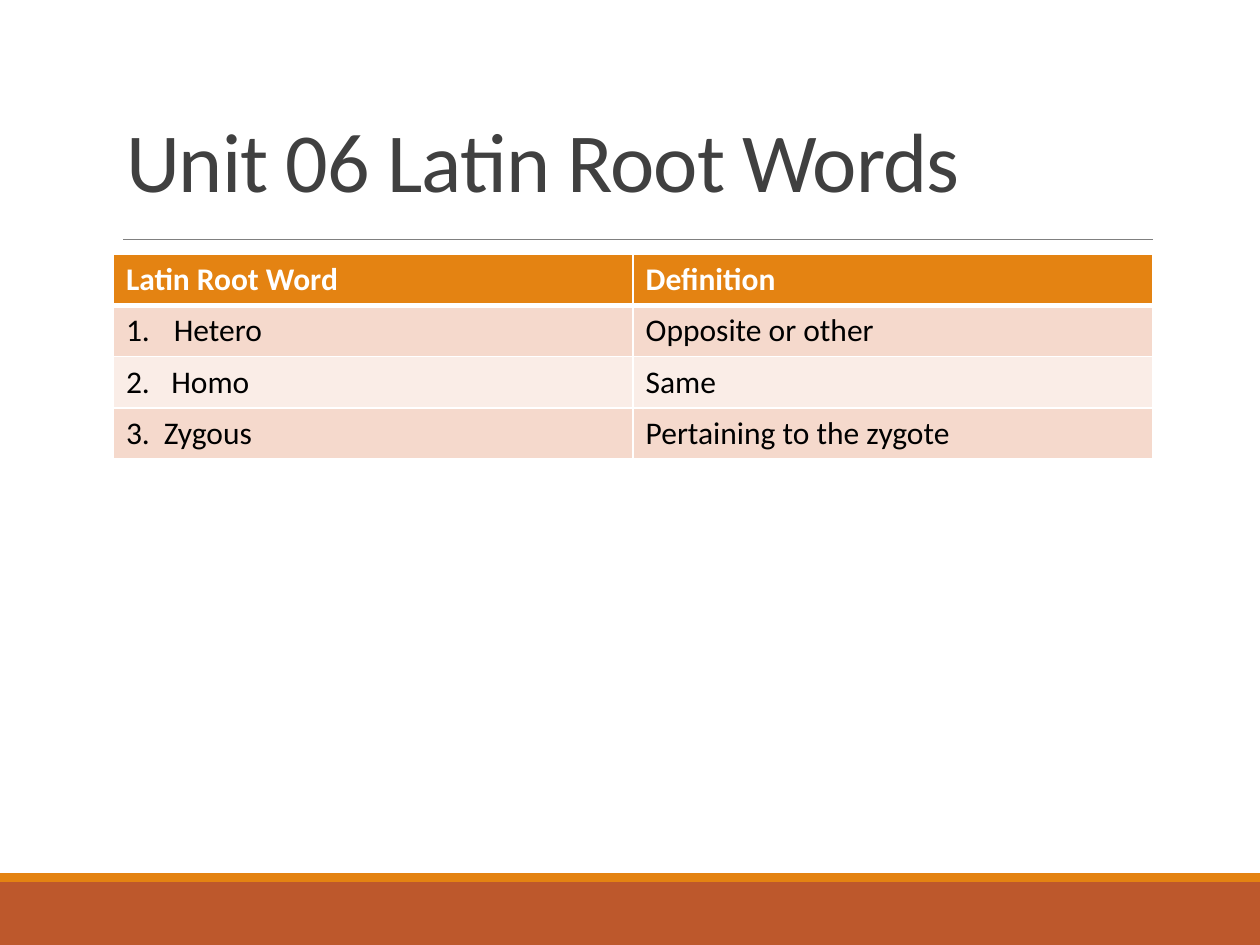
"""Build a slide with a table of Latin root words and their definitions."""
from lxml import etree
from pptx import Presentation
from pptx.dml.color import RGBColor
from pptx.enum import shapes, text
from pptx.oxml.ns import qn
from pptx.util import Inches, Pt

WHITE = RGBColor(0xFF, 0xFF, 0xFF)
BLACK = RGBColor(0x00, 0x00, 0x00)
ORANGE = RGBColor(0xE4, 0x83, 0x12)
RUST = RGBColor(0xBD, 0x58, 0x2C)
GRAY = RGBColor(0x80, 0x80, 0x80)
CHARCOAL = RGBColor(0x40, 0x40, 0x40)
PEACH = RGBColor(0xF5, 0xD9, 0xCC)
PALE_PEACH = RGBColor(0xFA, 0xED, 0xE7)
FONT = "Calibri"
ROWS = [
    ("Latin Root Word", "Definition"),
    ("Hetero", "Opposite or other"),
    ("Homo", "Same"),
    ("Zygous", "Pertaining to the zygote"),
]
ROW_FILLS = [ORANGE, PEACH, PALE_PEACH, PEACH]
NUMBER_INDENTS = [0, 0.38, 0.36, 0.3]


def add_border(cell, side, width):
    line = etree.SubElement(cell._tc.get_or_add_tcPr(), qn(f"a:ln{side}"), w=str(Pt(width)))
    fill = etree.SubElement(line, qn("a:solidFill"))
    etree.SubElement(fill, qn("a:srgbClr"), val=str(WHITE))


def number_paragraph(para, number, indent):
    properties = para._p.get_or_add_pPr()
    properties.set("marL", str(Inches(indent)))
    properties.set("indent", str(-Inches(indent)))
    etree.SubElement(properties, qn("a:buFont"), typeface="+mj-lt")
    etree.SubElement(properties, qn("a:buAutoNum"), type="arabicPeriod", startAt=str(number))


deck = Presentation()
deck.slide_width, deck.slide_height = Inches(10), Inches(7.5)
page = deck.slides.add_slide(deck.slide_layouts[5])

for top, height, color in [(7, 0.5, RUST), (6.93, 0.07, ORANGE)]:
    band = page.shapes.add_shape(
        shapes.MSO_SHAPE.RECTANGLE, 0, Inches(top), deck.slide_width, Inches(height))
    band.shadow.inherit = False
    band.fill.solid()
    band.fill.fore_color.rgb = color
    band.line.fill.background()

rule = page.shapes.add_connector(
    shapes.MSO_CONNECTOR.STRAIGHT, Inches(0.98), Inches(1.9), Inches(9.15), Inches(1.9))
rule.line.color.rgb = GRAY
rule.line.width = Pt(0.5)
etree.SubElement(rule._element.spPr, qn("a:effectLst"))

title = page.shapes.title
title.left, title.top = Inches(0.9), Inches(0.12)
title.width, title.height = Inches(8.25), Inches(1.59)
frame = title.text_frame
frame.text = "Unit 06 Latin Root Words"
frame.word_wrap = True
frame.auto_size = text.MSO_AUTO_SIZE.NONE
frame.vertical_anchor = text.MSO_ANCHOR.BOTTOM
para = frame.paragraphs[0]
para.alignment = text.PP_ALIGN.LEFT
para.line_spacing = 0.85
para.font.name = FONT
para.font.size = Pt(48)
para.font.color.rgb = CHARCOAL
para.runs[0].font._element.set("spc", "-50")

table = page.shapes.add_table(
    len(ROWS), 2, Inches(0.9), Inches(2.02), Inches(8.25), Inches(1.62)).table
for row, words in enumerate(ROWS):
    for column, word in enumerate(words):
        cell = table.cell(row, column)
        for side in "LRTB":
            header_edge = (row, side) in [(0, "B"), (1, "T")]
            add_border(cell, side, 3 if header_edge else 1)
        cell.fill.solid()
        cell.fill.fore_color.rgb = ROW_FILLS[row]
        cell.text = word
        para = cell.text_frame.paragraphs[0]
        para.font.name = FONT
        para.font.size = Pt(18)
        para.font.bold = row == 0
        para.font.color.rgb = BLACK if row else WHITE
        if row and column == 0:
            para_properties = para._p.get_or_add_pPr()
            default_font = para_properties.find(qn("a:defRPr"))
            number_paragraph(para, row, NUMBER_INDENTS[row])
            para_properties.append(default_font)

deck.save("out.pptx")
